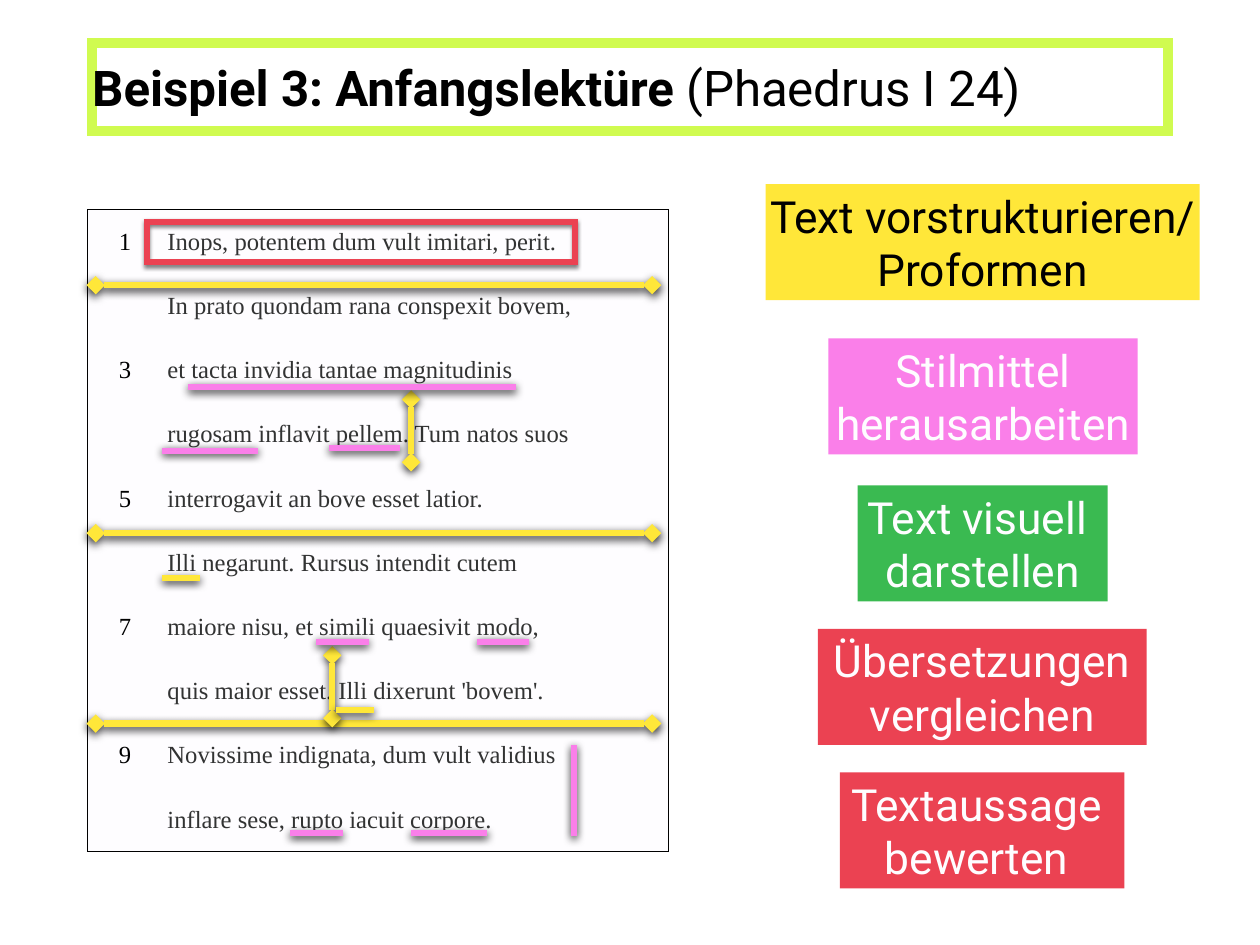
from lxml.etree import SubElement
from pptx import Presentation
from pptx.dml.color import RGBColor
from pptx.enum.shapes import MSO_CONNECTOR, MSO_SHAPE
from pptx.enum.text import MSO_ANCHOR, MSO_AUTO_SIZE, PP_ALIGN
from pptx.oxml.ns import qn
from pptx.util import Inches, Pt

# Content
COLORS = {"lime": "D0FB50", "yellow": "FFE739", "pink": "FA7FE9", "red": "EB4252",
          "green": "3ABA51", "paper": "FEFDFF", "ink": "323333", "black": "000000"}
TITLE = [("Beispiel 3: Anfangslektüre ", True), ("(Phaedrus I 24)", False)]
VERSES = [
    "Inops, potentem dum vult imitari, perit.",
    "In prato quondam rana conspexit bovem,",
    "et tacta invidia tantae magnitudinis",
    "rugosam inflavit pellem. Tum natos suos",
    "interrogavit an bove esset latior.",
    "Illi negarunt. Rursus intendit cutem",
    "maiore nisu, et simili quaesivit modo,",
    "quis maior esset. Illi dixerunt 'bovem'.",
    "Novissime indignata, dum vult validius",
    "inflare sese, rupto iacuit corpore.",
]
# lines, left, top, width, fill, text colour
METHODS = [
    (["Text vorstrukturieren/", "Proformen"], 8.64, 2.08, 4.9, "yellow", "black"),
    (["Stilmittel", "herausarbeiten"], 9.48 - 0.13, 3.82, 3.49, "pink", "paper"),
    (["Text visuell ", "darstellen"], 9.68, 5.48, 2.82, "green", "paper"),
    (["Übersetzungen", "vergleichen"], 9.23, 7.1, 3.71, "red", "paper"),
    (["Textaussage ", "bewerten "], 9.48, 8.72, 3.21, "red", "paper"),
]
SECTION_BREAKS = [3.22, 6.02, 8.17]                 # y
SENTENCE_BREAKS = [(4.64, 4.51), (3.75, 7.4)]       # x, top
UNDERLINES = {                                      # x from, x to, y
    "yellow": [(1.83, 2.26, 6.53), (3.79, 4.22, 8.02)],
    "pink": [(2.12, 5.82, 4.37), (1.83, 2.91, 5.09), (3.71, 4.52, 5.06),
             (3.57, 4.16, 7.25), (5.38, 5.97, 7.25),
             (3.27, 3.87, 9.41), (4.64, 5.5, 9.41)],
}


def rgb(name):
    return RGBColor.from_string(COLORS[name])


def add_run(p, text, **font):
    r = p.add_run()
    r.text = text
    color = font.pop("color")
    for key, value in font.items():
        setattr(r.font, key, value)
    r.font.color.rgb = rgb(color)


def format_frame(tf, **values):
    for side in ("left", "right", "top", "bottom"):
        setattr(tf, f"margin_{side}", 0)
    for key, value in values.items():
        setattr(tf, key, value)


def outline(sp, color, width):
    sp.line.color.rgb = rgb(color)
    sp.line.width = Pt(width)
    SubElement(sp.line._get_or_add_ln(), qn("a:miter"), lim="800000")


def add_shadow(sp, opacity, blur):
    effects = SubElement(sp._element.spPr, qn("a:effectLst"))
    shadow = SubElement(effects, qn("a:outerShdw"), blurRad=str(Pt(blur)), dist=str(Pt(2)),
                        dir="5400000", rotWithShape="0")
    color = SubElement(shadow, qn("a:srgbClr"), val=COLORS["black"])
    SubElement(color, qn("a:alpha"), val=str(opacity * 1000))


def add_mark(x1, y1, x2, y2, color, diamonds=False):
    line = s.shapes.add_connector(MSO_CONNECTOR.STRAIGHT, *map(Inches, (x1, y1, x2, y2)))
    line.line.color.rgb = rgb(color)
    line.line.width = Pt(5)
    if diamonds:
        for end in ("a:headEnd", "a:tailEnd"):
            SubElement(line.line._get_or_add_ln(), qn(end), type="diamond")
    add_shadow(line, 82, 7)


def add_border(cell, side):
    ln = SubElement(cell._tc.get_or_add_tcPr(), qn(f"a:ln{side}"), w=str(Pt(1)))
    SubElement(SubElement(ln, qn("a:solidFill")), qn("a:srgbClr"), val=COLORS["black"])


prs = Presentation()
prs.slide_width, prs.slide_height = Inches(14.22), Inches(10.67)
s = prs.slides.add_slide(prs.slide_layouts[5])

# Title
title = s.shapes.title
title.left, title.top, title.width, title.height = map(Inches, (1.04, 0.49, 12.14, 0.99))
outline(title, "lime", 8)
format_frame(title.text_frame, vertical_anchor=MSO_ANCHOR.MIDDLE, word_wrap=True,
             auto_size=MSO_AUTO_SIZE.NONE)
p = title.text_frame.paragraphs[0]
p.alignment = PP_ALIGN.LEFT
for text, bold in TITLE:
    add_run(p, text, size=Pt(40), name="Roboto", bold=bold, color="black")

# Poem table: odd verses are numbered, only the outer edge is ruled
last = len(VERSES) - 1
table = s.shapes.add_table(len(VERSES), 2, *map(Inches, (0.99, 2.37, 6.56, 7.25))).table
table.first_row = table.horz_banding = False
table._tbl.tblPr.find(qn("a:tableStyleId")).text = "{2D5ABB26-0587-4C30-8999-92F81FD0307C}"
for column, width in zip(table.columns, (0.84, 5.72)):
    column.width = Inches(width)
for i, verse in enumerate(VERSES):
    number = str(i + 1) if i % 2 == 0 else ""
    for j, (text, color) in enumerate([(number, "black"), (verse, "ink")]):
        cell = table.cell(i, j)
        cell.vertical_anchor = MSO_ANCHOR.MIDDLE
        for side in ("left", "right", "top", "bottom"):
            setattr(cell, f"margin_{side}", Inches(0.06))
        for side, ruled in {"L": j == 0, "R": j == 1, "T": i == 0, "B": i == last}.items():
            if ruled:
                add_border(cell, side)
        cell.fill.solid()
        cell.fill.fore_color.rgb = rgb("paper")
        p = cell.text_frame.paragraphs[0]
        p.alignment = PP_ALIGN.LEFT if j else PP_ALIGN.CENTER
        if text:
            add_run(p, text, size=Pt(20), name="Times New Roman", color=color)

# Method labels
for lines, left, top, width, fill, color in METHODS:
    sp = s.shapes.add_textbox(*map(Inches, (left, top, width, 1.31)))
    sp.fill.solid()
    sp.fill.fore_color.rgb = rgb(fill)
    tf = sp.text_frame
    format_frame(tf, vertical_anchor=MSO_ANCHOR.MIDDLE, word_wrap=False,
                 auto_size=MSO_AUTO_SIZE.SHAPE_TO_FIT_TEXT)
    for i, text in enumerate(lines):
        p = tf.add_paragraph() if i else tf.paragraphs[0]
        p.alignment = PP_ALIGN.CENTER
        add_run(p, text, size=Pt(36), name="Roboto", color=color)

# Breaks between sections and sentences
for y in SECTION_BREAKS:
    add_mark(1.08, y, 7.36, y, "yellow", diamonds=True)
for x, top in SENTENCE_BREAKS:
    add_mark(x, top + 0.71, x, top, "yellow", diamonds=True)

# Underlined words and the bar beside the last verses
for color, marks in UNDERLINES.items():
    for x1, x2, y in marks:
        add_mark(x1, y, x2, y, color)
add_mark(6.48, 9.44, 6.48, 8.41, "pink")

# Frame around the moral
frame = s.shapes.add_shape(MSO_SHAPE.RECTANGLE, *map(Inches, (1.66, 2.51, 4.83, 0.45)))
frame.fill.background()
outline(frame, "red", 5)
add_shadow(frame, 50, 3)

prs.save("out.pptx")
